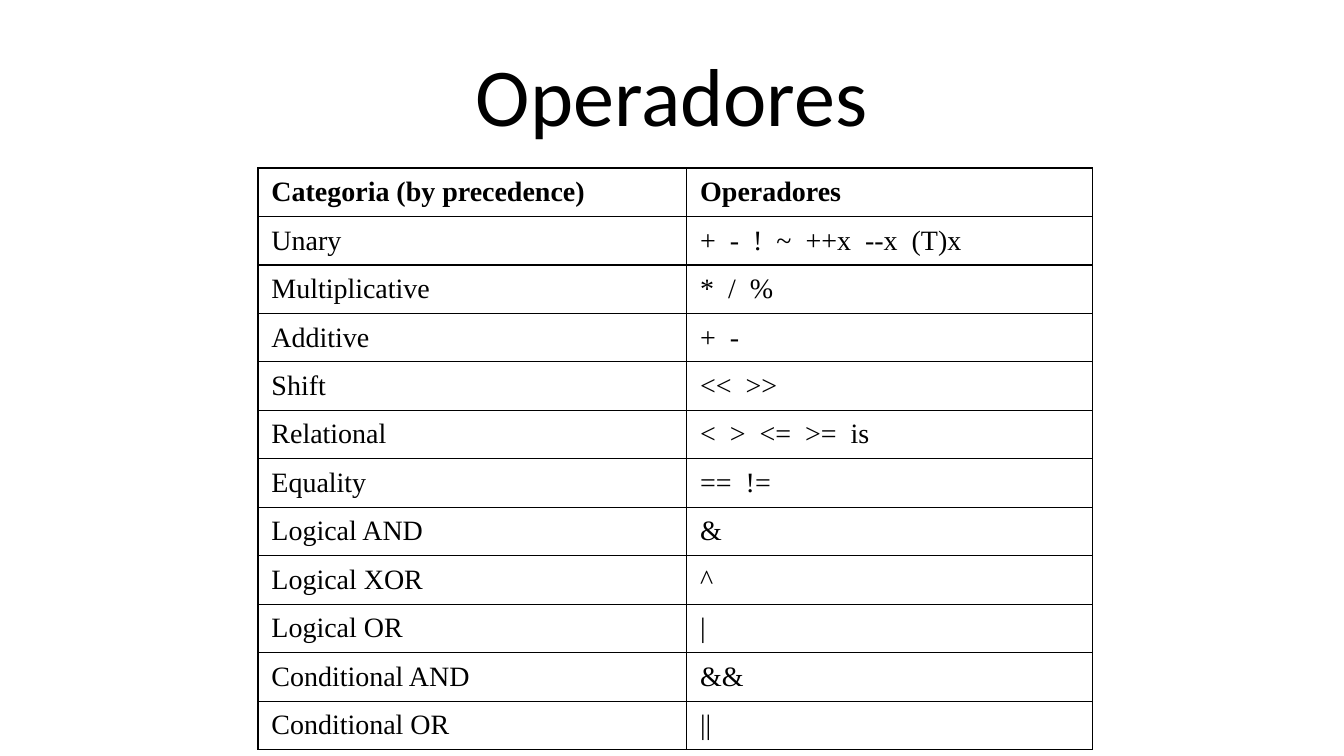
import lxml.etree
import pptx
import pptx.dml.color
import pptx.enum.text
import pptx.oxml.ns
import pptx.util

Inches = pptx.util.Inches
BLACK = pptx.dml.color.RGBColor(0, 0, 0)
WHITE = pptx.dml.color.RGBColor(255, 255, 255)
OPERATOR_GAP = chr(160) + " "
HEADINGS = ("Categoria (by precedence)", "Operadores")
OPERATORS = {
    "Unary": ["+", "-", "!", "~", "++x", "--x", "(T)x"],
    "Multiplicative": ["*", "/", "%"],
    "Additive": ["+", "-"],
    "Shift": ["<<", ">>"],
    "Relational": ["<", ">", "<=", ">=", "is"],
    "Equality": ["==", "!="],
    "Logical AND": ["&"],
    "Logical XOR": ["^"],
    "Logical OR": ["|"],
    "Conditional AND": ["&&"],
    "Conditional OR": ["||"],
}


def write_text(frame, text, *, font, size, bold=False, align=None, hanging=0):
    """Write one formatted paragraph into a text frame."""
    para = frame.paragraphs[0]
    para.alignment = align
    if hanging:
        properties = para._p.get_or_add_pPr()
        properties.set("marL", str(Inches(hanging)))
        properties.set("indent", str(-Inches(hanging)))
    span = para.add_run()
    span.text = text
    span.font.name = font
    span.font.size = pptx.util.Pt(size)
    span.font.bold = bold
    span.font.color.rgb = BLACK


def draw_borders(cell, width):
    """Draw a solid line on all four sides of a table cell."""
    qn = pptx.oxml.ns.qn
    properties = cell._tc.get_or_add_tcPr()
    for position, side in enumerate(("a:lnL", "a:lnR", "a:lnT", "a:lnB")):
        line = lxml.etree.Element(qn(side), w=str(pptx.util.Pt(width)))
        fill = lxml.etree.SubElement(line, qn("a:solidFill"))
        lxml.etree.SubElement(fill, qn("a:srgbClr"), val=str(BLACK))
        properties.insert(position, line)


def place_title(page, left, top, width, height):
    """Place and format the slide title in the given box."""
    box = page.shapes.title
    box.left, box.top, box.width, box.height = map(Inches, (left, top, width, height))
    box.text_frame.vertical_anchor = pptx.enum.text.MSO_ANCHOR.MIDDLE
    write_text(box.text_frame, "Operadores", font="Calibri", size=44,
               align=pptx.enum.text.PP_ALIGN.CENTER)


def place_operator_table(page, left, top, column_widths, height):
    """Place the table of operators in order of precedence."""
    rows = [HEADINGS]
    rows += [(name, OPERATOR_GAP.join(signs)) for name, signs in OPERATORS.items()]
    table = page.shapes.add_table(
        len(rows), len(column_widths), Inches(left), Inches(top),
        Inches(sum(column_widths)), Inches(height)).table
    table.first_row = table.horz_banding = False
    for column, width in zip(table.columns, column_widths):
        column.width = Inches(width)
    for row_index, texts in enumerate(rows):
        for column_index, text in enumerate(texts):
            cell = table.cell(row_index, column_index)
            cell.vertical_anchor = pptx.enum.text.MSO_ANCHOR.MIDDLE
            cell.fill.solid()
            cell.fill.fore_color.rgb = WHITE
            draw_borders(cell, 0.75)
            write_text(cell.text_frame, text, font="Times New Roman", size=15,
                       bold=row_index == 0, hanging=0.38)


def main():
    """Build the deck and save it."""
    deck = pptx.Presentation()
    deck.slide_width = Inches(10)
    deck.slide_height = deck.slide_width * 9 // 16
    page = deck.slides.add_slide(deck.slide_layouts[5])
    place_title(page, 0.5, 0.23, 9, 0.94)
    place_operator_table(page, 1.92, 1.25, (3.19, 3.02), 4.33)
    deck.save("out.pptx")


if __name__ == "__main__":
    main()
